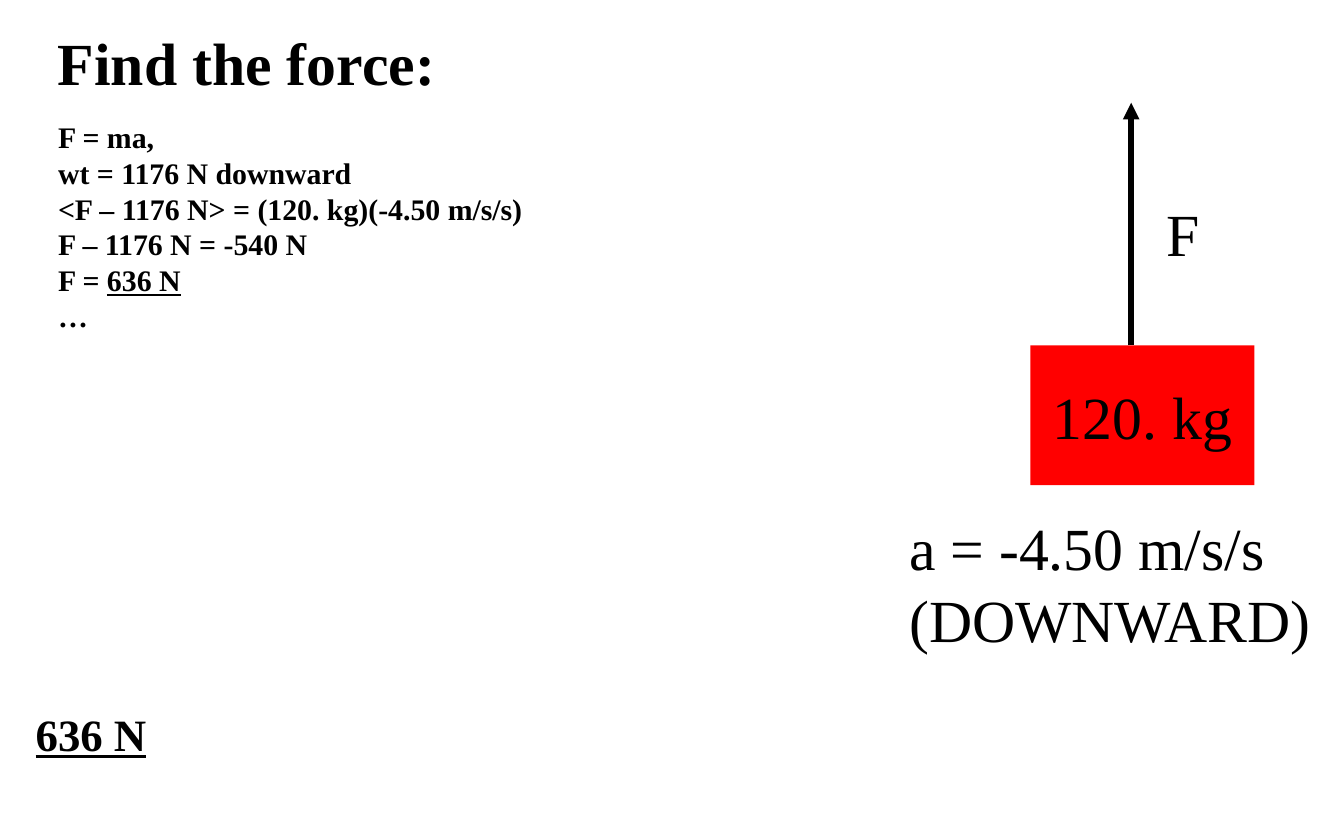
from lxml import etree
from pptx import Presentation
from pptx.dml.color import RGBColor
from pptx.enum.shapes import MSO_CONNECTOR, MSO_SHAPE
from pptx.enum.text import MSO_ANCHOR, MSO_AUTO_SIZE, PP_ALIGN
from pptx.oxml.ns import qn
from pptx.util import Pt

RECT = MSO_SHAPE.RECTANGLE
LINE = MSO_CONNECTOR.STRAIGHT
MIDDLE = MSO_ANCHOR.MIDDLE
CENTER = PP_ALIGN.CENTER
GROW = MSO_AUTO_SIZE.SHAPE_TO_FIT_TEXT


def color(code):
    return RGBColor.from_string(code)


class Deck:
    font = "Times New Roman"
    ink = "000000"

    def __init__(self, width, height):
        self.file = Presentation()
        self.file.slide_width = Pt(width)
        self.file.slide_height = Pt(height)
        self.slide = self.file.slides.add_slide(self.file.slide_layouts[6])

    def style(self, run, size, bold=False, under=False):
        run.font.name = self.font
        run.font.size = Pt(size)
        run.font.bold = bold
        run.font.underline = under
        run.font.color.rgb = color(self.ink)

    def text(self, box, lines, size, bold=False, wrap=False):
        """Write lines into a frame; parts between underscores are underlined."""
        frame = self.slide.shapes.add_textbox(*map(Pt, box)).text_frame
        frame.word_wrap = wrap
        frame.auto_size = GROW
        for i, line in enumerate(lines):
            para = frame.add_paragraph() if i else frame.paragraphs[0]
            for j, part in enumerate(line.split("_")):
                if part:
                    run = para.add_run()
                    run.text = part
                    self.style(run, size, bold, j % 2 == 1)

    def block(self, box, label, fill, size):
        shape = self.slide.shapes.add_shape(RECT, *map(Pt, box))
        shape.shadow.inherit = False
        shape.fill.solid()
        shape.fill.fore_color.rgb = color(fill)
        shape.line.fill.background()
        frame = shape.text_frame
        frame.word_wrap = False
        frame.vertical_anchor = MIDDLE
        frame.text = label
        para = frame.paragraphs[0]
        para.alignment = CENTER
        self.style(para.runs[0], size)

    def arrow(self, start, end, width):
        line = self.slide.shapes.add_connector(LINE, *map(Pt, start + end))
        line.line.color.rgb = color(self.ink)
        line.line.width = Pt(width)
        props = line._element.spPr
        etree.SubElement(props.find(qn("a:ln")), qn("a:tailEnd"), type="triangle")
        etree.SubElement(props, qn("a:effectLst"))


def main():
    deck = Deck(720, 450)
    deck.block((552, 185, 120, 75), "120. kg", "FF0000", 32)
    deck.text((618, 102, 32.4, 46), ["F"], 32)
    work = [
        "F = ma,",
        "wt = 1176 N downward",
        "<F – 1176 N> = (120. kg)(-4.50 m/s/s)",
        "F – 1176 N = -540 N",
        "F = _636 N_ ",
        "…",
    ]
    deck.text((24, 60, 492, 124), work, 16, bold=True, wrap=True)
    deck.text((24, 10, 654, 46), ["Find the force:"], 32, bold=True, wrap=True)
    deck.arrow((606, 185), (606, 55), 3)
    deck.text((480, 270, 232, 85), ["a = -4.50 m/s/s", "(DOWNWARD)"], 32)
    deck.text((12, 375, 74, 36.7), ["_636 N_"], 24, bold=True)
    deck.file.save("out.pptx")


if __name__ == "__main__":
    main()
